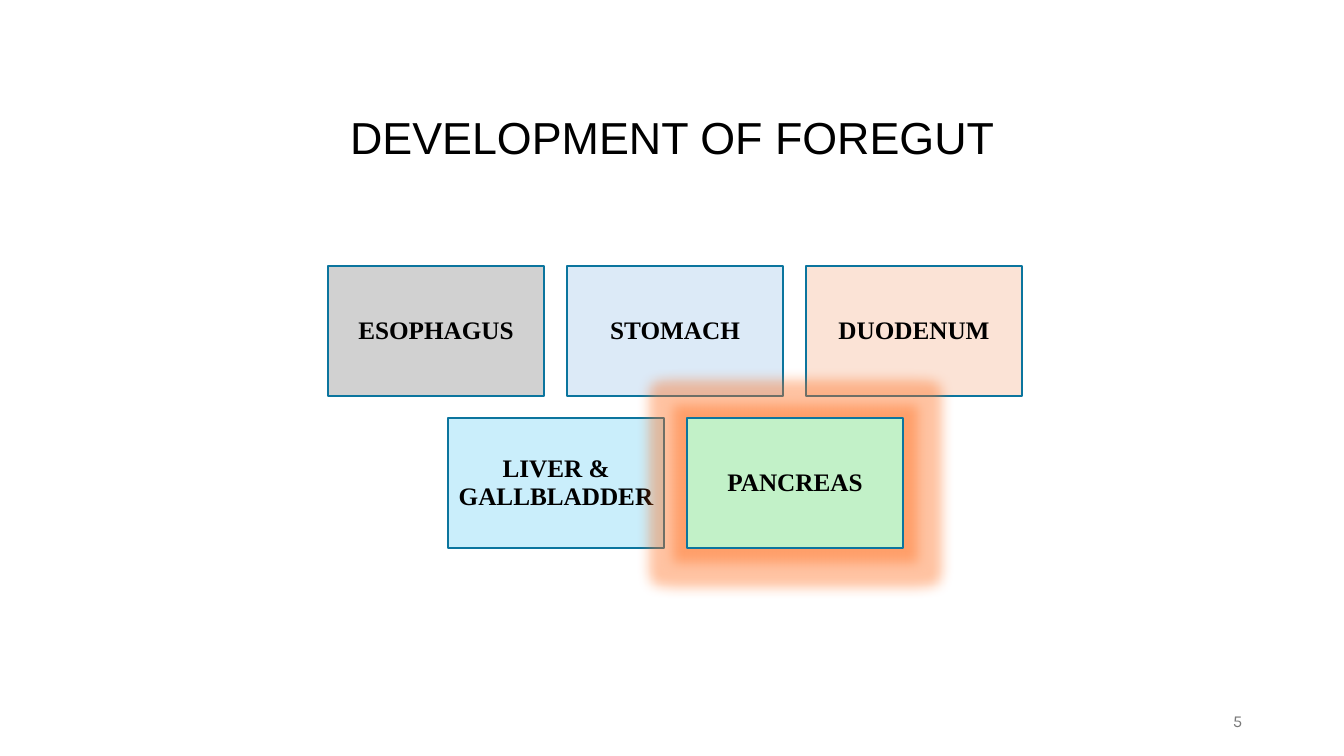
from lxml import etree
from pptx import Presentation
from pptx.dml.color import RGBColor
from pptx.enum.shapes import MSO_SHAPE
from pptx.enum.text import MSO_ANCHOR, PP_ALIGN
from pptx.oxml.ns import qn
from pptx.util import Inches, Pt

RECTANGLE = MSO_SHAPE.RECTANGLE
MIDDLE = MSO_ANCHOR.MIDDLE
CENTER, RIGHT = PP_ALIGN.CENTER, PP_ALIGN.RIGHT

BOX_WIDTH, BOX_HEIGHT = 2.15, 1.29
COLUMN_STEP, ROW_STEP = 2.37, 1.51
ORGAN_ROWS = [
    (3.25, [("ESOPHAGUS", "D1D1D1"), ("STOMACH", "DCEAF7"), ("DUODENUM", "FBE3D6")]),
    (4.44, [("LIVER & GALLBLADDER", "CAEEFB"), ("PANCREAS", "C2F1C8")]),
]
HIGHLIGHTED_ORGAN = "PANCREAS"


def rgb(color):
    return RGBColor.from_string(color)


def write(shape, text, font_name, size, color, bold=False, align=CENTER, spacing=0.9):
    """Put one formatted, vertically centred paragraph in the shape."""
    frame = shape.text_frame
    frame.word_wrap = True
    frame.vertical_anchor = MIDDLE
    paragraph = frame.paragraphs[0]
    paragraph.alignment = align
    paragraph.line_spacing = spacing
    run = paragraph.add_run()
    run.text = text
    for attribute, value in {"name": font_name, "size": Pt(size), "bold": bold}.items():
        setattr(run.font, attribute, value)
    run.font.color.rgb = rgb(color)


prs = Presentation()
prs.slide_width, prs.slide_height = Inches(13.33), Inches(7.5)
slide = prs.slides.add_slide(prs.slide_layouts[5])

title = slide.shapes.title
title.left, title.top = Inches(0.92), Inches(0.4)
title.width, title.height = Inches(11.5), Inches(1.45)
write(title, "DEVELOPMENT OF FOREGUT", "Arial", 32, "000000")
title.text_frame.margin_top = Inches(0.58)

for row, (row_left, organs) in enumerate(ORGAN_ROWS):
    for column, (organ, fill) in enumerate(organs):
        box = slide.shapes.add_shape(
            RECTANGLE,
            Inches(row_left + column * COLUMN_STEP), Inches(2.64 + row * ROW_STEP),
            Inches(BOX_WIDTH), Inches(BOX_HEIGHT),
        )
        box.shadow.inherit = False
        box.fill.solid()
        box.fill.fore_color.rgb = rgb(fill)
        box.line.color.rgb = rgb("0B759E")
        box.line.width = Pt(1.5)
        write(box, organ, "Times New Roman", 18, "000000", bold=True)
        for side in ("left", "top", "right", "bottom"):
            setattr(box.text_frame, f"margin_{side}", Inches(0.07))

        if organ == HIGHLIGHTED_ORGAN:
            effects = box.element.spPr.find(qn("a:effectLst"))
            glow = etree.SubElement(effects, qn("a:glow"), rad=str(Pt(18)))
            glow_color = etree.SubElement(glow, qn("a:srgbClr"), val="FF6A17")
            etree.SubElement(glow_color, qn("a:alpha"), val="40000")

page_number = slide.shapes.add_textbox(Inches(9.42), Inches(6.95), Inches(3), Inches(0.4))
write(page_number, "5", "Karla", 12, "797979", align=RIGHT, spacing=1.0)

prs.save("out.pptx")
